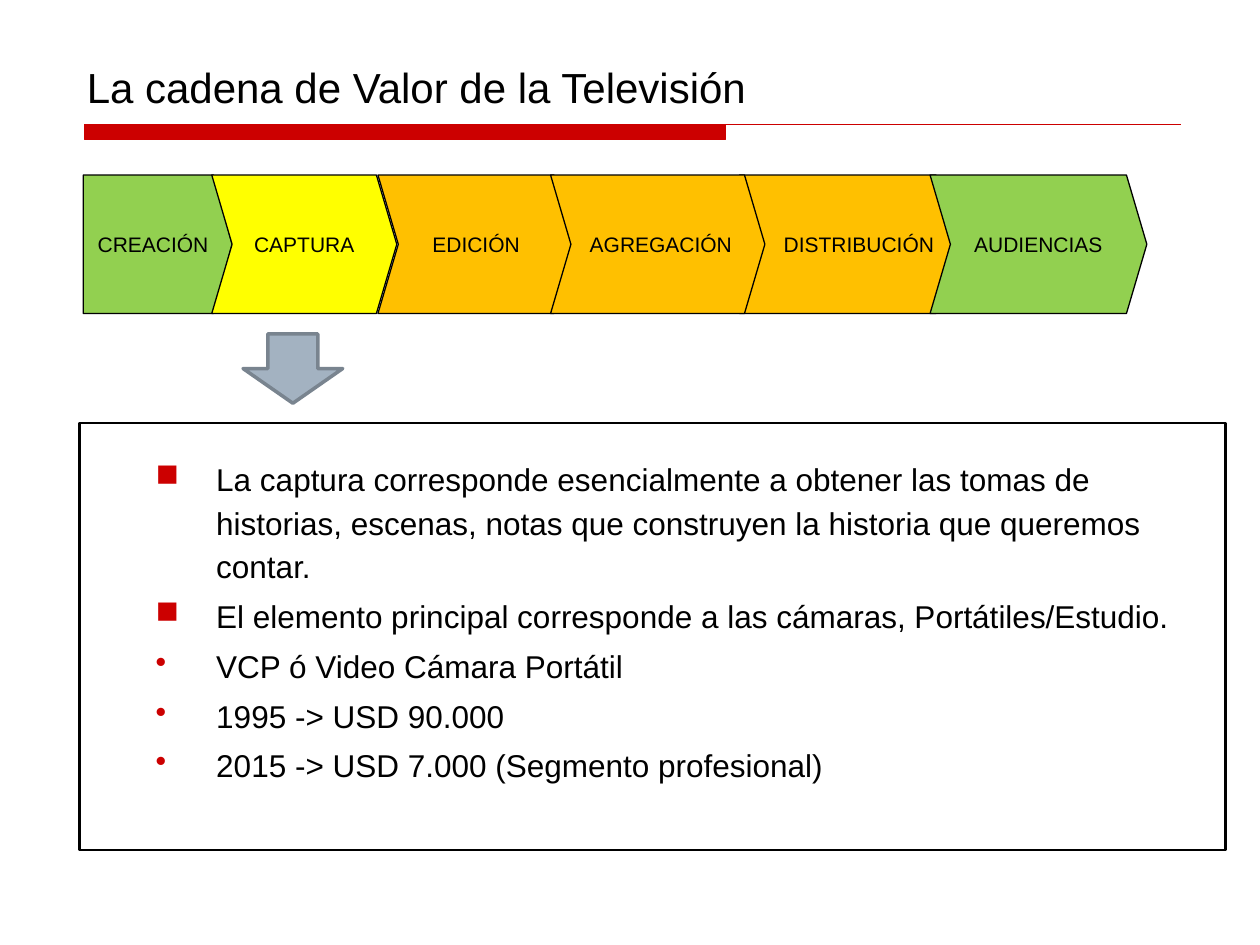
"""Build the slide on the value chain of television."""
from dataclasses import dataclass

from lxml.etree import SubElement
from pptx import Presentation
from pptx.dml.color import RGBColor
from pptx.enum.shapes import MSO_SHAPE
from pptx.enum.text import MSO_ANCHOR, PP_ALIGN
from pptx.oxml.ns import qn
from pptx.util import Cm, Pt


@dataclass(frozen=True)
class Theme:
    font: str = "Arial"
    ink: str = "000000"
    accent: str = "CC0000"
    green: str = "92D050"
    yellow: str = "FFFF00"
    orange: str = "FFC000"
    arrow_fill: str = "A3B2C1"
    arrow_line: str = "79848F"
    title_size: int = 24
    body_size: int = 18
    stage_size: int = 12


class Slide:
    def __init__(self, page, theme):
        self.page = page
        self.theme = theme

    def paint(self, shape, fill, line, width):
        shape.shadow.inherit = False
        if fill:
            shape.fill.solid()
            shape.fill.fore_color.rgb = RGBColor.from_string(fill)
        else:
            shape.fill.background()
        shape.line.color.rgb = RGBColor.from_string(line)
        shape.line.width = Pt(width)

    def style_text(self, paragraph, size):
        for span in paragraph.runs:
            span.font.name = self.theme.font
            span.font.size = Pt(size)
            span.font.color.rgb = RGBColor.from_string(self.theme.ink)

    def shape(self, kind, left, top, width, height, fill, line, line_width):
        shape = self.page.shapes.add_shape(kind, Cm(left), Cm(top), Cm(width), Cm(height))
        self.paint(shape, fill, line, line_width)
        return shape

    def title(self, text, left, top, width, height):
        box = self.page.shapes.add_textbox(Cm(left), Cm(top), Cm(width), Cm(height))
        box.text_frame.word_wrap = True
        box.text_frame.text = text
        self.style_text(box.text_frame.paragraphs[0], self.theme.title_size)

    def title_rule(self, left, top, bar_right, right, thickness):
        builder = self.page.shapes.build_freeform(Cm(left), Cm(top))
        bottom = top + thickness
        corners = [(bar_right, top), (bar_right, bottom), (left, bottom)]
        builder.add_line_segments([(Cm(x), Cm(y)) for x, y in corners], close=True)
        builder.move_to(Cm(left), Cm(top))
        builder.add_line_segments([(Cm(right), Cm(top))], close=False)
        self.paint(builder.convert_to_shape(), self.theme.accent, self.theme.accent, 0.75)

    def stage(self, text, left, width, fill, align, kind=MSO_SHAPE.CHEVRON, point=0.147):
        shape = self.shape(kind, left, 3.53, width, 2.79, fill, self.theme.ink, 0.75)
        shape.adjustments[0] = point
        frame = shape.text_frame
        frame.word_wrap = False
        frame.vertical_anchor = MSO_ANCHOR.MIDDLE
        if align == PP_ALIGN.LEFT:
            frame.margin_left, frame.margin_right = Cm(0.48), Cm(0)
        frame.text = text
        frame.paragraphs[0].alignment = align
        self.style_text(frame.paragraphs[0], self.theme.stage_size)

    def bullet(self, paragraph, mark):
        properties = paragraph._p.get_or_add_pPr()
        properties.set("marL", str(Cm(2.51)))
        properties.set("indent", str(Cm(-1.22)))
        color = SubElement(properties, qn("a:buClr"))
        SubElement(color, qn("a:srgbClr"), val=self.theme.accent)
        SubElement(properties, qn("a:buChar"), char=mark)

    def bullet_box(self, items, left, top, width, height):
        box = self.shape(MSO_SHAPE.RECTANGLE, left, top, width, height, None, self.theme.ink, 1.5)
        frame = box.text_frame
        frame.word_wrap = True
        frame.vertical_anchor = MSO_ANCHOR.TOP
        frame.margin_top = Cm(0.64)
        for index, (mark, text) in enumerate(items):
            paragraph = frame.add_paragraph() if index else frame.paragraphs[0]
            paragraph.text = text
            self.bullet(paragraph, mark)
            paragraph.alignment = PP_ALIGN.LEFT
            paragraph.line_spacing = 1.15
            if index:
                paragraph.space_before = Pt(3.6)
            self.style_text(paragraph, self.theme.body_size)


def main():
    theme = Theme()
    deck = Presentation()
    deck.slide_width, deck.slide_height = Cm(25.4), Cm(19.05)
    slide = Slide(deck.slides.add_slide(deck.slide_layouts[6]), theme)

    slide.title_rule(1.7, 2.51, 14.63, 23.8, 0.3)
    slide.title("La cadena de Valor de la Televisión", 1.5, 1.12, 19.61, 1.27)
    slide.shape(MSO_SHAPE.DOWN_ARROW, 4.9, 6.73, 2.01, 1.4, theme.arrow_fill, theme.arrow_line, 2)
    slide.bullet_box(
        [
            ("■", "La captura corresponde esencialmente a obtener las tomas de historias, "
                  "escenas, notas que construyen la historia que queremos contar."),
            ("■", "El elemento principal corresponde a las cámaras, Portátiles/Estudio."),
            ("•", "VCP ó Video Cámara Portátil"),
            ("•", "1995 -> USD 90.000"),
            ("•", "2015 -> USD 7.000 (Segmento profesional)"),
        ],
        1.6, 8.53, 23.11, 8.61,
    )
    slide.stage("DISTRIBUCIÓN", 14.91, 4.37, theme.orange, PP_ALIGN.LEFT)
    slide.stage("CREACIÓN", 1.68, 3, theme.green, PP_ALIGN.CENTER, MSO_SHAPE.PENTAGON, 0.134)
    slide.stage("CAPTURA", 4.27, 3.73, theme.yellow, PP_ALIGN.CENTER)
    slide.stage("EDICIÓN", 7.62, 3.96, theme.orange, PP_ALIGN.CENTER)
    slide.stage("AGREGACIÓN", 11.1, 4.32, theme.orange, PP_ALIGN.RIGHT)
    slide.stage("AUDIENCIAS", 18.75, 4.37, theme.green, PP_ALIGN.LEFT)
    deck.save("out.pptx")


if __name__ == "__main__":
    main()
